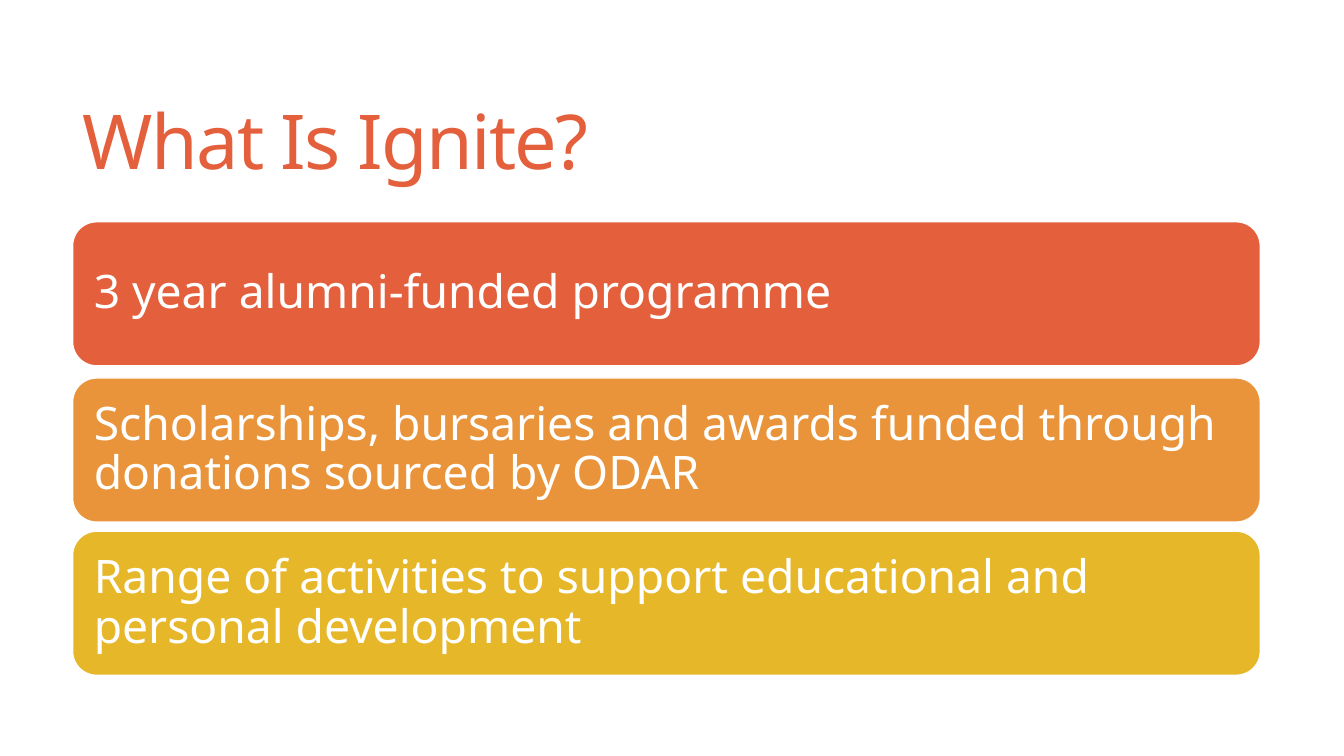
import dataclasses

import pptx
import pptx.dml.color
import pptx.enum.shapes
import pptx.enum.text
import pptx.util
from pptx.util import Inches


@dataclasses.dataclass
class Theme:
    font: str = "Noto Sans"
    title_size: int = 54
    band_size: int = 33
    title: str = "E45F3C"
    white: str = "FFFFFF"
    bands: tuple = ("E45F3C", "E9943A", "E6B729")


def rgb(value):
    return pptx.dml.color.RGBColor.from_string(value)


class SlideBuilder:
    def __init__(self, prs, theme):
        self.theme = theme
        self.s = prs.slides.add_slide(prs.slide_layouts.get_by_name("Title Only"))

    def set_text(self, sp, text, size, color, inset, paragraph_format):
        """Fill a shape with one left-aligned, vertically centred paragraph."""
        tf = sp.text_frame
        frame_format = {
            "word_wrap": True,
            "auto_size": pptx.enum.text.MSO_AUTO_SIZE.NONE,
            "vertical_anchor": pptx.enum.text.MSO_ANCHOR.MIDDLE,
            **{f"margin_{side}": inset for side in ("left", "top", "right", "bottom")},
        }
        for name, value in frame_format.items():
            setattr(tf, name, value)
        p = tf.paragraphs[0]
        p.alignment = pptx.enum.text.PP_ALIGN.LEFT
        for name, value in paragraph_format.items():
            setattr(p, name, value)
        r = p.add_run()
        r.text = text
        for name, value in {"name": self.theme.font, "size": pptx.util.Pt(size)}.items():
            setattr(r.font, name, value)
        r.font.color.rgb = rgb(color)
        return r

    def title(self, text, left, top, width, height):
        sp = self.s.shapes.title
        sp.left, sp.top, sp.width, sp.height = left, top, width, height
        r = self.set_text(sp, text, self.theme.title_size, self.theme.title,
                          Inches(0.1), {"line_spacing": 0.85})
        r._r.get_or_add_rPr().set("spc", "-120")

    def band(self, text, color, left, top, width, height):
        sp = self.s.shapes.add_shape(
            pptx.enum.shapes.MSO_SHAPE.ROUNDED_RECTANGLE, left, top, width, height)
        sp.shadow.inherit = False
        sp.fill.solid()
        sp.fill.fore_color.rgb = rgb(color)
        sp.line.color.rgb = rgb(self.theme.white)
        sp.line.width = pptx.util.Pt(1)
        self.set_text(sp, text, self.theme.band_size, self.theme.white, Inches(0.14),
                      {"line_spacing": 0.9, "space_after": pptx.util.Pt(11.5)})


def main():
    prs = pptx.Presentation()
    prs.slide_width, prs.slide_height = Inches(13.33), Inches(7.5)
    theme = Theme()
    slide = SlideBuilder(prs, theme)
    left, width = Inches(0.72), Inches(11.78)
    slide.title("What Is Ignite?", left, Inches(0.55), width, Inches(1.81))
    points = (
        "3 year alumni-funded programme",
        "Scholarships, bursaries and awards funded through donations sourced by ODAR",
        "Range of activities to support educational and personal development",
    )
    tops = (2.2, 3.75, 5.27)
    for text, color, top in zip(points, theme.bands, tops):
        slide.band(text, color, left, Inches(top), width, Inches(1.43))
    prs.save("out.pptx")


if __name__ == "__main__":
    main()
